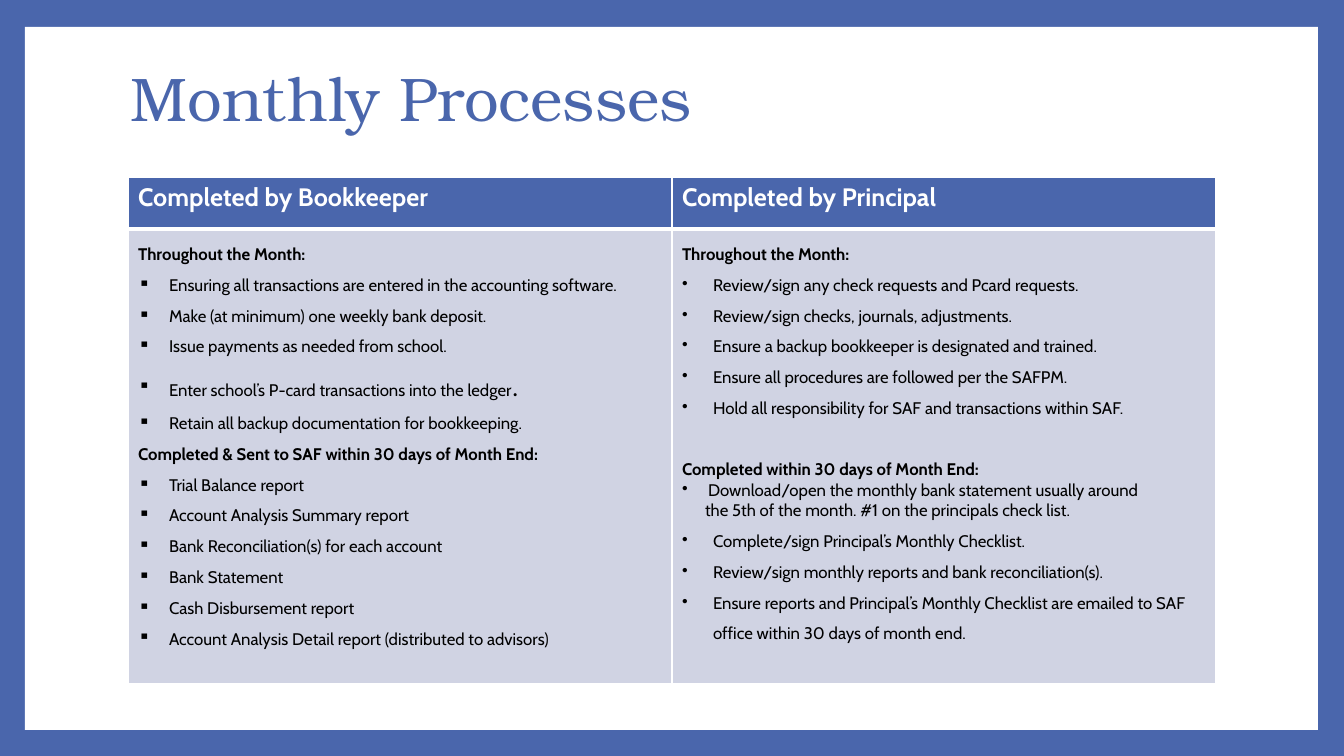
from dataclasses import dataclass

from lxml.etree import SubElement
from pptx import Presentation
from pptx.dml.color import RGBColor
from pptx.enum.shapes import MSO_SHAPE
from pptx.enum.text import MSO_ANCHOR
from pptx.oxml import parse_xml
from pptx.oxml.ns import nsdecls, qn
from pptx.util import Emu, Pt


@dataclass(frozen=True)
class Theme:
    blue: str = "4A66AC"
    pale: str = "D0D3E3"
    white: str = "FFFFFF"
    black: str = "000000"
    title_font: str = "TeX Gyre Bonum"
    body_font: str = "Cabin"
    stop_font: str = "Calibri"
    title_size: int = 44
    header_size: int = 18
    body_size: int = 12


@dataclass(frozen=True)
class Line:
    text: str
    bullet: str = ""
    bold: bool = False
    margin: int = 0
    spacing: float = 1.5
    gap: int = 0
    large_stop: bool = False


def heading(text, gap=0):
    return Line(text, bold=True, gap=gap)


def bullets(mark, *texts):
    return [Line(text, mark, margin=31) for text in texts]


BOOKKEEPER = [
    heading("Throughout the Month:"),
    *bullets(
        "▪",
        "Ensuring all transactions are entered in the accounting software.",
        "Make (at minimum) one weekly bank deposit.",
        "Issue payments as needed from school.",
    ),
    Line("Enter school’s P-card transactions into the ledger", "▪", margin=31, large_stop=True),
    *bullets("▪", "Retain all backup documentation for bookkeeping."),
    heading("Completed & Sent to SAF within 30 days of Month End:"),
    *bullets(
        "▪",
        "Trial Balance report",
        "Account Analysis Summary report",
        "Bank Reconciliation(s) for each account",
        "Bank Statement",
        "Cash Disbursement report",
        "Account Analysis Detail report (distributed to advisors)",
    ),
]

PRINCIPAL = [
    heading("Throughout the Month:"),
    *bullets(
        "•",
        "Review/sign any check requests and Pcard requests.",
        "Review/sign checks, journals, adjustments.",
        "Ensure a backup bookkeeper is designated and trained.",
        "Ensure all procedures are followed per the SAFPM.",
        "Hold all responsibility for SAF and transactions within SAF.",
    ),
    heading("Completed within 30 days of Month End:", gap=22),
    Line("Download/open the monthly bank statement usually around", "•", margin=26, spacing=1),
    Line("the 5th of the month. #1 on the principals check list.", margin=23, spacing=1),
    *bullets(
        "•",
        "Complete/sign Principal’s Monthly Checklist.",
        "Review/sign monthly reports and bank reconciliation(s).",
        "Ensure reports and Principal’s Monthly Checklist are emailed to SAF "
        "office within 30 days of month end.",
    ),
]


class SlideBuilder:
    def __init__(self, theme):
        self.theme = theme
        self.deck = Presentation()
        self.deck.slide_width = self.px(1344)
        self.deck.slide_height = self.px(756)
        self.page = self.deck.slides.add_slide(self.deck.slide_layouts[6])

    def px(self, length):
        return Emu(round(length * 914400 / 100.8))

    def place(self, *lengths):
        return [self.px(length) for length in lengths]

    def paint(self, fill, color):
        fill.solid()
        fill.fore_color.rgb = RGBColor.from_string(color)

    def background(self, color):
        self.paint(self.page.background.fill, color)

    def panel(self, left, top, width, height, color):
        box = self.page.shapes.add_shape(MSO_SHAPE.RECTANGLE, *self.place(left, top, width, height))
        box.shadow.inherit = False
        self.paint(box.fill, color)
        box.line.fill.background()

    def span(self, para, text, size, color, font, bold=False):
        span = para.add_run()
        span.text = text
        span.font.size = Pt(size)
        span.font.name = font
        span.font.bold = bold
        span.font.color.rgb = RGBColor.from_string(color)

    def title(self, left, top, width, height, text):
        box = self.page.shapes.add_textbox(*self.place(left, top, width, height))
        frame = box.text_frame
        frame.word_wrap = True
        frame.vertical_anchor = MSO_ANCHOR.MIDDLE
        para = frame.paragraphs[0]
        para.line_spacing = 0.9
        self.span(para, text, self.theme.title_size, self.theme.blue, self.theme.title_font)

    def table(self, left, top, widths, heights):
        frame = self.page.shapes.add_table(
            len(heights), len(widths), *self.place(left, top, sum(widths), sum(heights))
        )
        table = frame.table
        for column, width in zip(table.columns, widths):
            column.width = self.px(width)
        for row, height in zip(table.rows, heights):
            row.height = self.px(height)
        return table

    def cell(self, cell, color, top=1, bottom=1):
        self.paint(cell.fill, color)
        properties = cell._tc.get_or_add_tcPr()
        for index, (side, width) in enumerate(zip("LRTB", (1, 1, top, bottom))):
            border = parse_xml(
                f'<a:ln{side} {nsdecls("a")} w="{Pt(width)}"><a:solidFill>'
                f'<a:srgbClr val="{self.theme.white}"/></a:solidFill></a:ln{side}>'
            )
            properties.insert(index, border)

    def header(self, cell, text):
        self.cell(cell, self.theme.blue, bottom=3)
        para = cell.text_frame.paragraphs[0]
        self.span(para, text, self.theme.header_size, self.theme.white, self.theme.body_font, True)

    def body(self, cell, lines):
        theme = self.theme
        self.cell(cell, theme.pale, top=3)
        frame = cell.text_frame
        for index, line in enumerate(lines):
            para = frame.add_paragraph() if index else frame.paragraphs[0]
            para.line_spacing = float(line.spacing)
            if line.gap:
                para.space_before = Pt(line.gap)
            properties = para._p.get_or_add_pPr()
            properties.set("marL", str(self.px(line.margin)))
            properties.set("indent", str(self.px(-line.margin if line.bullet else 0)))
            if line.bullet:
                SubElement(properties, qn("a:buChar")).set("char", line.bullet)
            self.span(para, line.text, theme.body_size, theme.black, theme.body_font, line.bold)
            if line.large_stop:
                self.span(para, ".", theme.header_size, theme.black, theme.stop_font)


def main():
    theme = Theme()
    slide = SlideBuilder(theme)
    slide.background(theme.blue)
    slide.panel(25, 27, 1293, 703, theme.white)
    slide.title(121, 27, 1089, 149, "Monthly Processes")
    table = slide.table(128, 177, [544, 544], [52, 455])
    duties = {"Completed by Bookkeeper": BOOKKEEPER, "Completed by Principal": PRINCIPAL}
    for column, (name, lines) in enumerate(duties.items()):
        slide.header(table.cell(0, column), name)
        slide.body(table.cell(1, column), lines)
    slide.deck.save("out.pptx")


if __name__ == "__main__":
    main()
